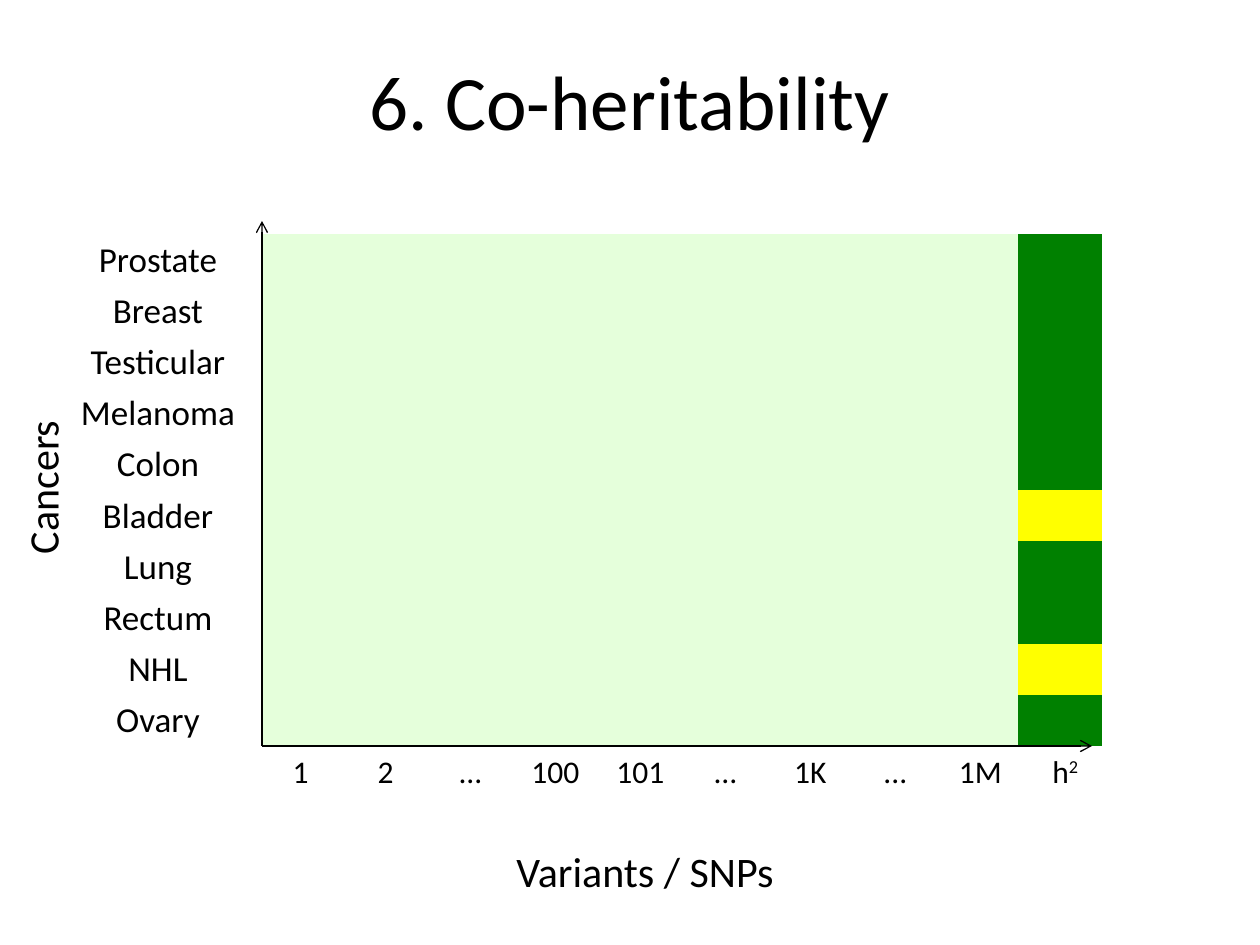
from pptx import Presentation
from pptx.dml.color import RGBColor as RGB
from pptx.enum.shapes import MSO_CONNECTOR as CONN
from pptx.enum.text import MSO_ANCHOR as ANCHOR, MSO_AUTO_SIZE as AUTO, PP_ALIGN as ALIGN
from pptx.oxml.ns import qn
from pptx.util import Pt
from lxml.etree import SubElement

THEME = {
    "font": "Calibri", "text": RGB(0, 0, 0), "paper": RGB(255, 255, 255),
    "pale": RGB(0xE5, 0xFF, 0xDB), "green": RGB(0, 0x80, 0), "yellow": RGB(255, 255, 0),
    "title": Pt(44), "axis": Pt(24), "cancer": Pt(20), "tick": Pt(18),
}
NO_STYLE = "{2D5ABB26-0587-4C30-8999-92F81FD0307C}"
SCALE = 914400 / 126

CANCERS = ["Prostate", "Breast", "Testicular", "Melanoma", "Colon",
           "Bladder", "Lung", "Rectum", "NHL", "Ovary"]
TICKS = ["1", "2", "...", "100", "101", "…", "1K", "...", "1M", "h2"]
YELLOW_ROWS = {"Bladder", "NHL"}


def px(*values):
    return [round(v * SCALE) for v in values]


def style(p, size, align=None):
    p.alignment = align
    for r in p.runs:
        r.font.name, r.font.size = THEME["font"], size
        r.font.color.rgb = THEME["text"]


prs = Presentation()
prs.slide_width, prs.slide_height = px(1260, 945)
s = prs.slides.add_slide(prs.slide_layouts[5])

# Three plain tables: heat map, variant ticks, cancer names
tables = []
for rows, cols, box in [(len(CANCERS), len(TICKS), (262, 234, 840, 512)),
                        (1, len(TICKS), (258, 747, 850, 51)),
                        (len(CANCERS), 1, (53, 234, 210, 512))]:
    frame = s.shapes.add_table(rows, cols, *px(*box))
    table = frame.table
    table.first_row = table.horz_banding = False
    table._tbl.tblPr.find(qn("a:tableStyleId")).text = NO_STYLE
    tables.append(table)
heat, ticks, names = tables

# Heat map cells, with heritability in the last column
for i, cancer in enumerate(CANCERS):
    for j in range(len(TICKS)):
        cell = heat.cell(i, j)
        cell.fill.solid()
        if j < len(TICKS) - 1:
            cell.fill.fore_color.rgb = THEME["pale"]
        else:
            cell.fill.fore_color.rgb = THEME["yellow" if cancer in YELLOW_ROWS else "green"]

# Tick labels, the last one with a raised 2
for j, label in enumerate(TICKS):
    cell = ticks.cell(0, j)
    cell.fill.background()
    p = cell.text_frame.paragraphs[0]
    if label == "h2":
        p.add_run().text = "h"
        r = p.add_run()
        r.text = "2"
        r.font._element.set("baseline", "30000")
    else:
        p.text = label
    style(p, THEME["tick"], ALIGN.CENTER)

# Cancer names
for i, cancer in enumerate(CANCERS):
    cell = names.cell(i, 0)
    cell.fill.solid()
    cell.fill.fore_color.rgb = THEME["paper"]
    cell.margin_left, cell.margin_top, cell.margin_right, cell.margin_bottom = px(1, 1, 1, 0)
    cell.vertical_anchor = ANCHOR.MIDDLE
    cell.text_frame.text = cancer
    style(cell.text_frame.paragraphs[0], THEME["cancer"], ALIGN.CENTER)

# Title
title = s.shapes.title
title.left, title.top, title.width, title.height = px(63, 21, 1134, 158)
tf = title.text_frame
tf.text = "6. Co-heritability"
tf.vertical_anchor = ANCHOR.MIDDLE
style(tf.paragraphs[0], THEME["title"], ALIGN.CENTER)

# Axis arrows from the lower left corner
for end in [(1092, 746), (262, 221)]:
    axis = s.shapes.add_connector(CONN.STRAIGHT, *px(262, 746, *end))
    axis.line.color.rgb = THEME["text"]
    axis.line.width = Pt(0.75)
    SubElement(axis.line._get_or_add_ln(), qn("a:tailEnd"), type="arrow")
    SubElement(axis._element.spPr, qn("a:effectLst"))

# Axis titles
for text, box, turn in [("Cancers", (-50, 443, 184, 63), 270),
                        ("Variants / SNPs", (504, 839, 321, 63), 0)]:
    sp = s.shapes.add_textbox(*px(*box))
    sp.rotation = turn
    tf = sp.text_frame
    tf.text = text
    tf.word_wrap = False
    tf.auto_size = AUTO.SHAPE_TO_FIT_TEXT
    style(tf.paragraphs[0], THEME["axis"])

prs.save("out.pptx")
